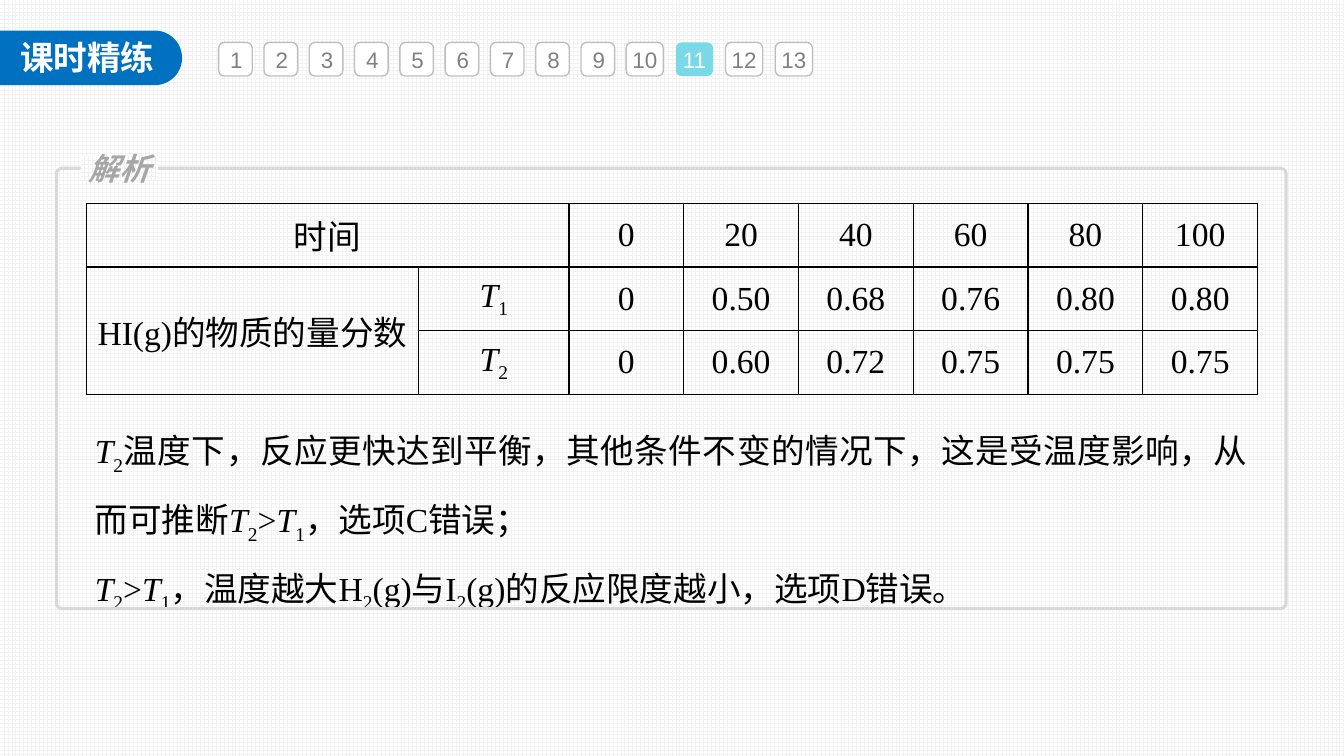
from lxml import etree
from pptx import Presentation
from pptx.dml.color import RGBColor
from pptx.enum import dml, shapes, text
from pptx.oxml import ns
from pptx.util import Pt

COLORS = {
    "blue": "0070C0", "white": "FFFFFF", "grid": "F2F2F2", "edge": "BFBFBF",
    "number": "808080", "current": "7AD9E7", "frame": "D9D9D9",
    "label": "A6A6A6", "black": "000000",
}
CURRENT = 11
TIMES = ["0", "20", "40", "60", "80", "100"]
FRACTIONS = [
    ["0", "0.50", "0.68", "0.76", "0.80", "0.80"],
    ["0", "0.60", "0.72", "0.75", "0.75", "0.75"],
]
EXPLANATION = [
    "/T|_2|温度下，反应更快达到平衡，其他条件不变的情况下，这是受温度影响，从而可推断"
    "|/T|_2|>|/T|_1|，选项C错误；",
    "/T|_2|>|/T|_1|，温度越大H|_2|(g)与I|_2|(g)的反应限度越小，选项D错误。",
]


def rgb(name):
    """Return the named colour."""
    return RGBColor.from_string(COLORS[name])


def paint_grid(fill):
    """Give a fill the pale grid pattern."""
    fill.patterned()
    fill.pattern = dml.MSO_PATTERN_TYPE.LARGE_GRID
    fill.fore_color.rgb = rgb("grid")
    fill.back_color.rgb = rgb("white")


def style(paragraph, size, color, font="Arial", align=text.PP_ALIGN.CENTER):
    """Set the font and alignment of a paragraph."""
    paragraph.alignment = align
    paragraph.font.size = Pt(size)
    paragraph.font.name = font
    paragraph.font.color.rgb = rgb(color)


def write_formula(paragraph, markup):
    """Write pieces split by bars, where / marks italics and _ a subscript."""
    for piece in markup.split("|"):
        run = paragraph.add_run()
        run.text = piece.lstrip("/_")
        if piece.startswith("/"):
            run.font.italic = True
        elif piece.startswith("_"):
            run._r.get_or_add_rPr().set("baseline", "-25000")


def place(part, left, top, width, height):
    """Move and size a part in points."""
    part.left, part.top = Pt(left), Pt(top)
    part.width, part.height = Pt(width), Pt(height)


def add_box(slide, kind, box, fill=None, line=None, weight=1):
    """Add a flat preset shape."""
    shape = slide.shapes.add_shape(kind, *map(Pt, box))
    shape.shadow.inherit = False
    if fill:
        shape.fill.solid()
        shape.fill.fore_color.rgb = rgb(fill)
    else:
        shape.fill.background()
    if line:
        shape.line.color.rgb = rgb(line)
        shape.line.width = Pt(weight)
    else:
        shape.line.fill.background()
    return shape


def add_heading(slide):
    """Add the blue tab and its title."""
    tab = add_box(slide, shapes.MSO_SHAPE.ROUND_2_SAME_RECTANGLE,
                  (45.4, -23.8, 39, 130.3), "blue")
    tab.adjustments[0] = 0.5
    tab.rotation = 90
    title = slide.shapes.title
    tab.element.addnext(title.element)
    place(title, 7.2, 23, 111.6, 36)
    frame = title.text_frame
    frame.text = "课时精练"
    frame.word_wrap = False
    frame.auto_size = text.MSO_AUTO_SIZE.SHAPE_TO_FIT_TEXT
    frame.vertical_anchor = text.MSO_ANCHOR.TOP
    style(frame.paragraphs[0], 24, "white", align=text.PP_ALIGN.LEFT)
    frame.paragraphs[0].font.bold = True


def add_number(slide, number):
    """Add one question number."""
    if number < 10:
        left, width = 156.2 + 32.35 * (number - 1), 24
    else:
        left, width = 447.3 + 35.5 * (number - 10), 26.6
    current = number == CURRENT
    button = add_box(slide, shapes.MSO_SHAPE.ROUNDED_RECTANGLE,
                     (left, 30.3, width, 24),
                     "current" if current else "white",
                     None if current else "edge")
    frame = button.text_frame
    frame.vertical_anchor = text.MSO_ANCHOR.MIDDLE
    if number >= 10:
        frame.margin_left = frame.margin_right = 0
    frame.text = str(number)
    style(frame.paragraphs[0], 16, "white" if current else "number")


def add_panel(slide):
    """Add the outlined panel with its label."""
    panel = add_box(slide, shapes.MSO_SHAPE.ROUNDED_RECTANGLE,
                    (40.3, 120.2, 878.4, 314.6), None, "frame", 2.25)
    panel.adjustments[0] = 0.013
    label = add_box(slide, shapes.MSO_SHAPE.RECTANGLE, (57.6, 111.6, 55.4, 17.3))
    paint_grid(label.fill)
    frame = label.text_frame
    frame.margin_left = frame.margin_right = 0
    frame.margin_top = frame.margin_bottom = 0
    frame.word_wrap = False
    frame.vertical_anchor = text.MSO_ANCHOR.MIDDLE
    frame.text = "解析"
    style(frame.paragraphs[0], 22, "label")
    frame.paragraphs[0].font.bold = True
    frame.paragraphs[0].font.italic = True


def add_explanation(slide):
    """Fill the body placeholder with the explanation."""
    body = slide.placeholders[1]
    place(body, 60.5, 287.3, 838.1, 132.5)
    frame = body.text_frame
    frame.word_wrap = True
    frame.auto_size = text.MSO_AUTO_SIZE.SHAPE_TO_FIT_TEXT
    for index, markup in enumerate(EXPLANATION):
        paragraph = frame.add_paragraph() if index else frame.paragraphs[0]
        style(paragraph, 24, "black", "Times New Roman", text.PP_ALIGN.JUSTIFY)
        paragraph.line_spacing = 1.5
        paragraph.space_before = Pt(0)
        properties = paragraph._p.get_or_add_pPr()
        properties.set("marL", "0")
        properties.set("indent", "0")
        bullet = etree.Element(ns.qn("a:buNone"))
        properties.find(ns.qn("a:defRPr")).addprevious(bullet)
        write_formula(paragraph, markup)


def add_borders(cell):
    """Draw thin black borders round a cell."""
    properties = cell._tc.get_or_add_tcPr()
    for index, side in enumerate(("lnL", "lnR", "lnT", "lnB")):
        line = etree.Element(ns.qn("a:" + side), w=str(Pt(1)))
        fill = etree.SubElement(line, ns.qn("a:solidFill"))
        etree.SubElement(fill, ns.qn("a:srgbClr"), val=COLORS["black"])
        properties.insert(index, line)


def add_fractions(slide):
    """Add the table of HI fractions over time."""
    rows = [["时间", ""] + TIMES,
            ["HI(g)的物质的量分数", "/T|_1"] + FRACTIONS[0],
            ["", "/T|_2"] + FRACTIONS[1]]
    table = slide.shapes.add_table(
        3, 8, Pt(61.5), Pt(145.4), Pt(836.9), Pt(136.2)).table
    for column, width in zip(table.columns, [237.6, 107.3] + [82] * 6):
        column.width = Pt(width)
    for row, entries in zip(table.rows, rows):
        row.height = Pt(45.4)
        for cell, entry in zip(row.cells, entries):
            cell.fill.background()
            add_borders(cell)
            cell.margin_left = cell.margin_right = Pt(5)
            cell.margin_top = cell.margin_bottom = 0
            cell.vertical_anchor = text.MSO_ANCHOR.MIDDLE
            paragraph = cell.text_frame.paragraphs[0]
            style(paragraph, 24, "black", "Times New Roman")
            if entry:
                write_formula(paragraph, entry)
    table.cell(0, 0).merge(table.cell(0, 1))
    table.cell(1, 0).merge(table.cell(2, 0))


def main():
    """Build and save the slide."""
    deck = Presentation()
    deck.slide_width, deck.slide_height = Pt(960), Pt(540)
    slide = deck.slides.add_slide(deck.slide_layouts[1])
    paint_grid(slide.background.fill)
    add_heading(slide)
    for number in range(1, 14):
        add_number(slide, number)
    add_panel(slide)
    add_explanation(slide)
    add_fractions(slide)
    deck.save("out.pptx")


if __name__ == "__main__":
    main()
